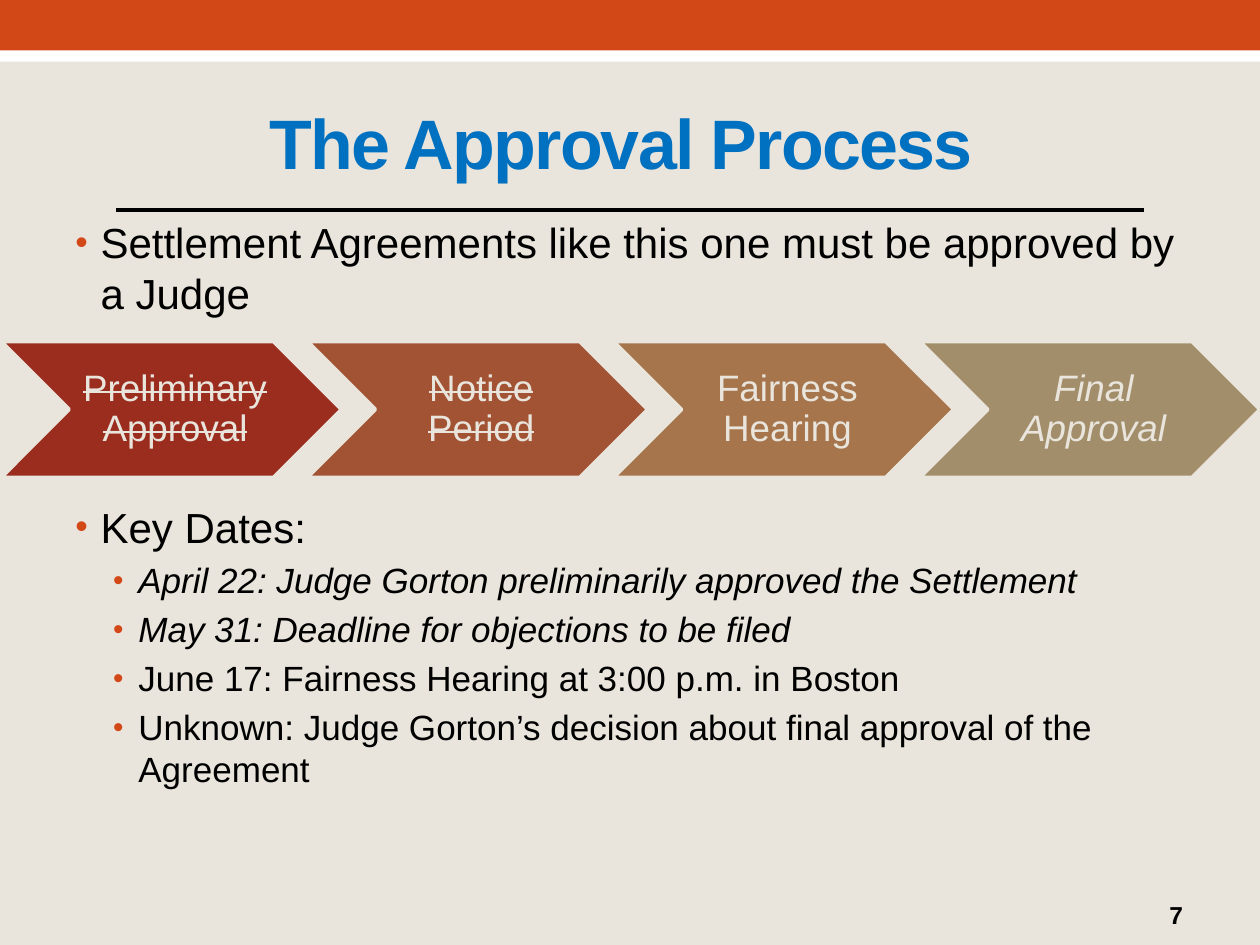
from lxml.etree import SubElement
from pptx import Presentation
from pptx.dml.color import RGBColor
from pptx.enum.shapes import MSO_CONNECTOR, MSO_SHAPE
from pptx.enum.text import MSO_ANCHOR, MSO_AUTO_SIZE, PP_ALIGN
from pptx.oxml.ns import qn
from pptx.util import Inches, Pt

COLORS = {
    "background": "E9E5DC",
    "white": "FFFFFF",
    "accent": "D34817",
    "title": "0070C0",
    "text": "000000",
}
STEPS = [
    ("Preliminary Approval", "9B2D1F", True, False),
    ("Notice Period", "A25333", True, False),
    ("Fairness Hearing", "A6754B", False, False),
    ("Final Approval", "A28E6A", False, True),
]
INTRODUCTION = [
    ("Settlement Agreements like this one must be approved by a Judge", 0, False),
]
KEY_DATES = [
    ("Key Dates:", 0, False),
    ("April 22: Judge Gorton preliminarily approved the Settlement", 1, True),
    ("May 31: Deadline for objections to be filed", 1, True),
    ("June 17: Fairness Hearing at 3:00 p.m. in Boston", 1, False),
    ("Unknown: Judge Gorton’s decision about final approval of the Agreement", 1, False),
]
LEVEL_SIZES = [24, 20]
LEVEL_INDENTS = [0.2, 0.5]


def rgb(value):
    return RGBColor.from_string(value)


def add_run(paragraph, text, size, color, bold=False, italic=False):
    run = paragraph.add_run()
    run.text = text
    run.font.name = "Arial"
    run.font.size = Pt(size)
    run.font.bold = bold
    run.font.italic = italic
    run.font.color.rgb = rgb(color)
    return run


def add_filled_shape(slide, kind, left, top, width, height, fill):
    shape = slide.shapes.add_shape(
        kind, Inches(left), Inches(top), Inches(width), Inches(height)
    )
    shape.shadow.inherit = False
    shape.fill.solid()
    shape.fill.fore_color.rgb = rgb(fill)
    shape.line.fill.background()
    return shape


def add_rule(slide):
    rule = slide.shapes.add_connector(
        MSO_CONNECTOR.STRAIGHT, Inches(0.92), Inches(1.67), Inches(9.08), Inches(1.67)
    )
    rule.line.color.rgb = rgb(COLORS["text"])
    rule.line.width = Pt(2.25)
    SubElement(rule._element.spPr, qn("a:effectLst"))


def set_title(slide, text):
    title = slide.shapes.title
    title.left, title.top = Inches(0.5), Inches(0.58)
    title.width, title.height = Inches(9), Inches(1.08)
    frame = title.text_frame
    frame.auto_size = MSO_AUTO_SIZE.NONE
    frame.vertical_anchor = MSO_ANCHOR.MIDDLE
    paragraph = frame.paragraphs[0]
    paragraph.alignment = PP_ALIGN.CENTER
    run = add_run(paragraph, text, 40, COLORS["title"], bold=True)
    run.font._element.set("spc", "-100")


def add_text_box(slide, left, top, width, height):
    box = slide.shapes.add_textbox(
        Inches(left), Inches(top), Inches(width), Inches(height)
    )
    box.text_frame.word_wrap = True
    return box.text_frame


def set_bullet(paragraph, indent):
    properties = paragraph._p.get_or_add_pPr()
    properties.set("marL", str(Inches(indent)))
    properties.set("indent", str(Inches(-0.2)))
    color = SubElement(properties, qn("a:buClr"))
    SubElement(color, qn("a:srgbClr"), val=COLORS["accent"])
    SubElement(properties, qn("a:buSzPct"), val="85000")
    SubElement(properties, qn("a:buFont"), typeface="Arial")
    SubElement(properties, qn("a:buChar"), char="•")


def add_bullets(slide, top, height, bullets):
    frame = add_text_box(slide, 0.5, top, 9, height)
    for index, (text, level, italic) in enumerate(bullets):
        paragraph = frame.add_paragraph() if index else frame.paragraphs[0]
        size = LEVEL_SIZES[level]
        paragraph.level = level
        paragraph.space_before = Pt(size * 0.2)
        set_bullet(paragraph, LEVEL_INDENTS[level])
        add_run(paragraph, text, size, COLORS["text"], italic=italic)


def add_step(slide, index, text, fill, struck, italic):
    chevron = add_filled_shape(
        slide, MSO_SHAPE.CHEVRON, 0.01 + 2.43 * index, 2.71, 2.7, 1.08, fill
    )
    chevron.line.color.rgb = rgb(COLORS["background"])
    chevron.line.width = Pt(2.08)
    frame = chevron.text_frame
    frame.word_wrap = True
    frame.vertical_anchor = MSO_ANCHOR.MIDDLE
    frame.margin_left = Inches(0.09)
    frame.margin_right = frame.margin_top = frame.margin_bottom = Inches(0.03)
    paragraph = frame.paragraphs[0]
    paragraph.alignment = PP_ALIGN.CENTER
    paragraph.line_spacing = 0.9
    run = add_run(paragraph, text, 21, COLORS["background"], italic=italic)
    if struck:
        run.font._element.set("strike", "sngStrike")


def add_page_number(slide, number):
    frame = add_text_box(slide, 8.75, 7.08, 1.17, 0.36)
    frame.vertical_anchor = MSO_ANCHOR.MIDDLE
    paragraph = frame.paragraphs[0]
    paragraph.alignment = PP_ALIGN.CENTER
    add_run(paragraph, number, 14, COLORS["text"], bold=True)


def main():
    presentation = Presentation()
    presentation.slide_width = Inches(10)
    presentation.slide_height = Inches(7.5)
    slide = presentation.slides.add_slide(presentation.slide_layouts[5])
    slide.background.fill.solid()
    slide.background.fill.fore_color.rgb = rgb(COLORS["background"])
    add_filled_shape(slide, MSO_SHAPE.RECTANGLE, 0, 0.24, 10, 0.25, COLORS["white"])
    add_filled_shape(slide, MSO_SHAPE.RECTANGLE, 0, 0, 10, 0.4, COLORS["accent"])
    add_rule(slide)
    set_title(slide, "The Approval Process ")
    add_bullets(slide, 1.67, 0.98, INTRODUCTION)
    add_bullets(slide, 3.93, 3.15, KEY_DATES)
    add_page_number(slide, "7")
    for index, step in enumerate(STEPS):
        add_step(slide, index, *step)
    presentation.save("out.pptx")


if __name__ == "__main__":
    main()
